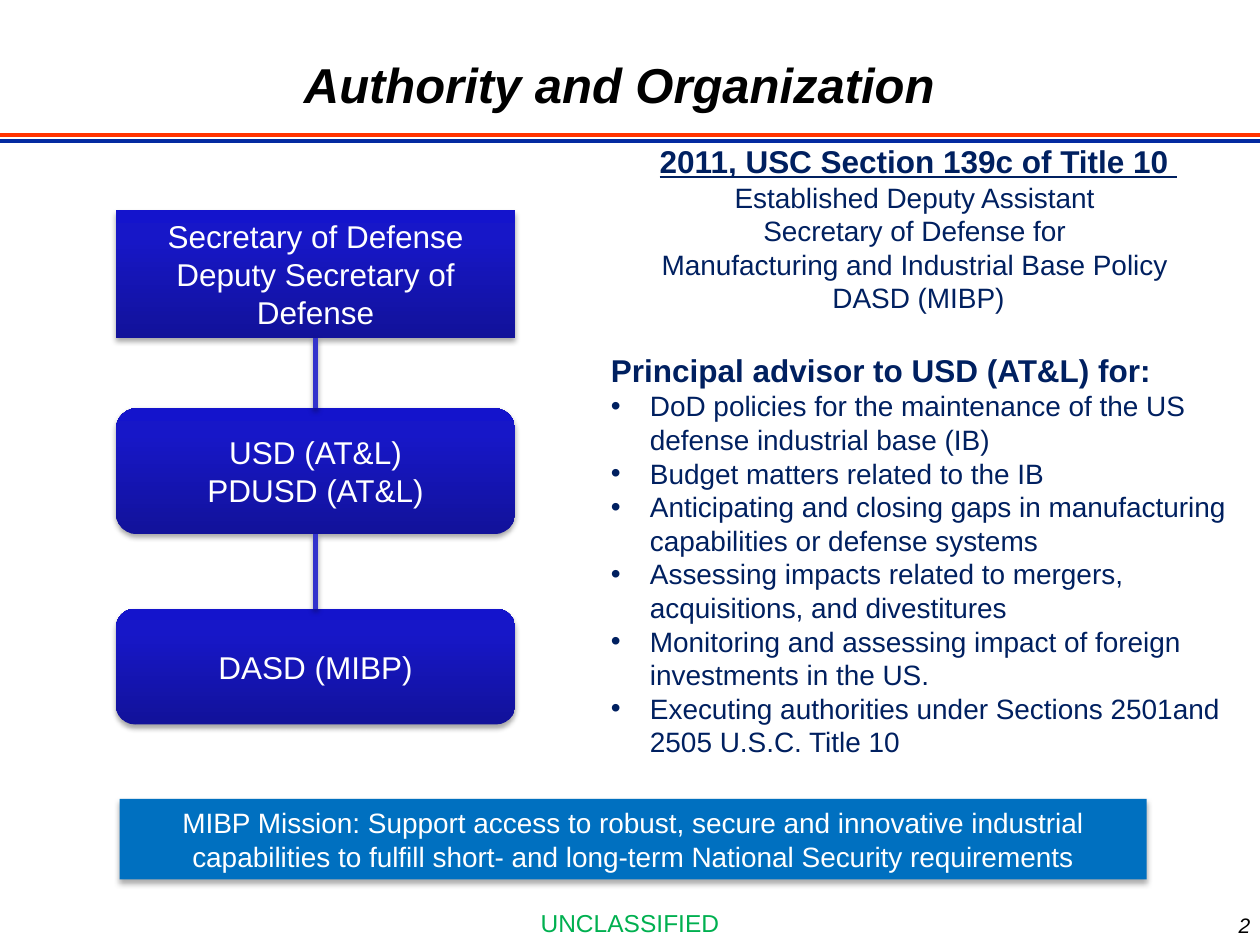
"""Build the Authority and Organization slide."""
from itertools import pairwise

from lxml.etree import SubElement
from pptx import Presentation
from pptx.dml.color import RGBColor
from pptx.enum.shapes import MSO_CONNECTOR, MSO_SHAPE
from pptx.enum.text import MSO_ANCHOR, PP_ALIGN
from pptx.oxml import parse_xml
from pptx.oxml.ns import nsdecls, qn
from pptx.util import Inches, Pt

WIDTH, HEIGHT = 10, 7.5
COLORS = {
    "black": "000000", "white": "FFFFFF", "navy": "002060", "green": "00B050",
    "blue": "0070C0", "link": "3333CC", "rule_red": "FF3300", "rule_blue": "032AA1",
}
BOX_GRADIENT = [(0, "12129A"), (80, "1717C8"), (100, "1414CC")]

TITLE = "Authority and Organization"
CHAIN = [
    (MSO_SHAPE.RECTANGLE, 1.67, 1.01, ["Secretary of Defense", "Deputy Secretary of Defense"]),
    (MSO_SHAPE.ROUNDED_RECTANGLE, 3.24, 1, ["USD (AT&L)", "PDUSD (AT&L)"]),
    (MSO_SHAPE.ROUNDED_RECTANGLE, 4.83, 0.92, ["DASD (MIBP)"]),
]
STATUTE = "2011, USC Section 139c of Title 10 "
ESTABLISHED = [
    "Established Deputy Assistant ",
    "Secretary of Defense for ",
    "Manufacturing and Industrial Base Policy ",
    "DASD (MIBP)",
]
ADVISOR = "Principal advisor to USD (AT&L) for:"
DUTIES = [
    "DoD policies for the maintenance of the US defense industrial base (IB)",
    "Budget matters related to the IB",
    "Anticipating and closing gaps in manufacturing capabilities or defense systems",
    "Assessing impacts related to mergers, acquisitions, and divestitures",
    "Monitoring and assessing impact of foreign investments in the US.",
    "Executing authorities under Sections 2501and 2505 U.S.C. Title 10",
]
MISSION = ("MIBP Mission: Support access to robust, secure and innovative industrial "
           "capabilities to fulfill short- and long-term National Security requirements")
MARKING = "UNCLASSIFIED"
PAGE = "2"
RULES = [("rule_blue", 1.12, 2.25), ("rule_red", 1.07, 2)]

CENTER = {"alignment": PP_ALIGN.CENTER}
HEADING = {"size": Pt(18), "bold": True}
BODY = {"size": Pt(16)}
BOX_LABEL = {"size": Pt(18)}


def assign(target, formats):
    for name, value in formats.items():
        setattr(target, name, value)


def inches(*lengths):
    return [Inches(length) for length in lengths]


def write(frame, lines, color, anchor=MSO_ANCHOR.TOP):
    assign(frame, {"word_wrap": True, "vertical_anchor": anchor})
    for index, (text, layout, font, bulleted) in enumerate(lines):
        paragraph = frame.add_paragraph() if index else frame.paragraphs[0]
        if bulleted:
            properties = paragraph._p.get_or_add_pPr()
            properties.set("marL", str(Inches(0.31)))
            properties.set("indent", str(-Inches(0.31)))
            SubElement(properties, qn("a:buFont"), typeface="Arial")
            SubElement(properties, qn("a:buChar"), char="•")
        assign(paragraph, layout)
        run = paragraph.add_run()
        run.text = text
        assign(run.font, {"name": "Arial", **font})
        run.font.color.rgb = RGBColor.from_string(COLORS[color])


def add_text(slide, place, lines, color):
    write(slide.shapes.add_textbox(*inches(*place)).text_frame, lines, color)


def add_shadow(item, blur, distance, opacity):
    item._element.spPr.append(parse_xml(
        f'<a:effectLst {nsdecls("a")}><a:outerShdw blurRad="{Pt(blur)}" dist="{Pt(distance)}" '
        f'dir="5400000" rotWithShape="0"><a:srgbClr val="000000"><a:alpha val="{opacity}000"/>'
        '</a:srgbClr></a:outerShdw></a:effectLst>'))


def add_line(slide, start, end, color, weight):
    line = slide.shapes.add_connector(MSO_CONNECTOR.STRAIGHT, *inches(*start, *end))
    line.line.color.rgb = RGBColor.from_string(COLORS[color])
    line.line.width = Pt(weight)
    return line


def add_box(slide, kind, place, lines):
    box = slide.shapes.add_shape(kind, *inches(*place))
    box.line.fill.background()
    write(box.text_frame, lines, "white", MSO_ANCHOR.MIDDLE)
    return box


def fill_gradient(box):
    stops = "".join(f'<a:gs pos="{position}000"><a:srgbClr val="{color}"/></a:gs>'
                    for position, color in BOX_GRADIENT)
    box._element.spPr.find(qn("a:prstGeom")).addnext(parse_xml(
        f'<a:gradFill {nsdecls("a")} rotWithShape="1"><a:gsLst>{stops}</a:gsLst>'
        '<a:lin ang="16200000" scaled="0"/></a:gradFill>'))


def add_chain(slide):
    boxes = []
    for kind, top, height, labels in CHAIN:
        lines = [(label, CENTER, BOX_LABEL, False) for label in labels]
        box = add_box(slide, kind, (0.92, top, 3.17, height), lines)
        fill_gradient(box)
        add_shadow(box, 3.1, 1.8, 35)
        boxes.append(box)
    for upper, lower in pairwise(boxes):
        link = add_line(slide, (0, 0), (0, 0), "link", 3)
        link.begin_connect(upper, 2)
        link.end_connect(lower, 0)
        add_shadow(link, 3.1, 1.8, 35)


def main():
    deck = Presentation()
    assign(deck, {"slide_width": Inches(WIDTH), "slide_height": Inches(HEIGHT)})
    slide = deck.slides.add_slide(deck.slide_layouts[5])

    for color, top, weight in RULES:
        rule = add_line(slide, (0, top), (WIDTH, top), color, weight)
        SubElement(rule._element.spPr, qn("a:effectLst"))

    title = slide.shapes.title
    assign(title, dict(zip(("left", "top", "width", "height"), inches(1, 0.33, 7.83, 0.75))))
    write(title.text_frame,
          [(TITLE, {**CENTER, "line_spacing": 0.85},
            {"size": Pt(28), "bold": True, "italic": True}, False)],
          "black", MSO_ANCHOR.MIDDLE)

    add_text(slide, (4.75, 1.08, 5.08, 5.05), [
        (STATUTE, CENTER, {**HEADING, "underline": True}, False),
        *[(text, CENTER, BODY, False) for text in ESTABLISHED],
        (ADVISOR, {"space_before": Pt(21)}, HEADING, False),
        *[(text, {}, BODY, True) for text in DUTIES],
    ], "navy")

    add_chain(slide)

    mission = add_box(slide, MSO_SHAPE.RECTANGLE, (0.95, 6.34, 8.15, 0.64),
                      [(MISSION, CENTER, BODY, False)])
    mission.fill.solid()
    mission.fill.fore_color.rgb = RGBColor.from_string(COLORS["blue"])
    add_shadow(mission, 3.5, 2.2, 32)

    add_text(slide, (0, 7.16, WIDTH, 0.34),
             [(MARKING, CENTER, {"size": Pt(14)}, False)], "green")
    add_text(slide, (7.94, 7.19, 2.08, 0.27),
             [(PAGE, {"alignment": PP_ALIGN.RIGHT}, {"size": Pt(12), "italic": True}, False)],
             "black")
    deck.save("out.pptx")


if __name__ == "__main__":
    main()
